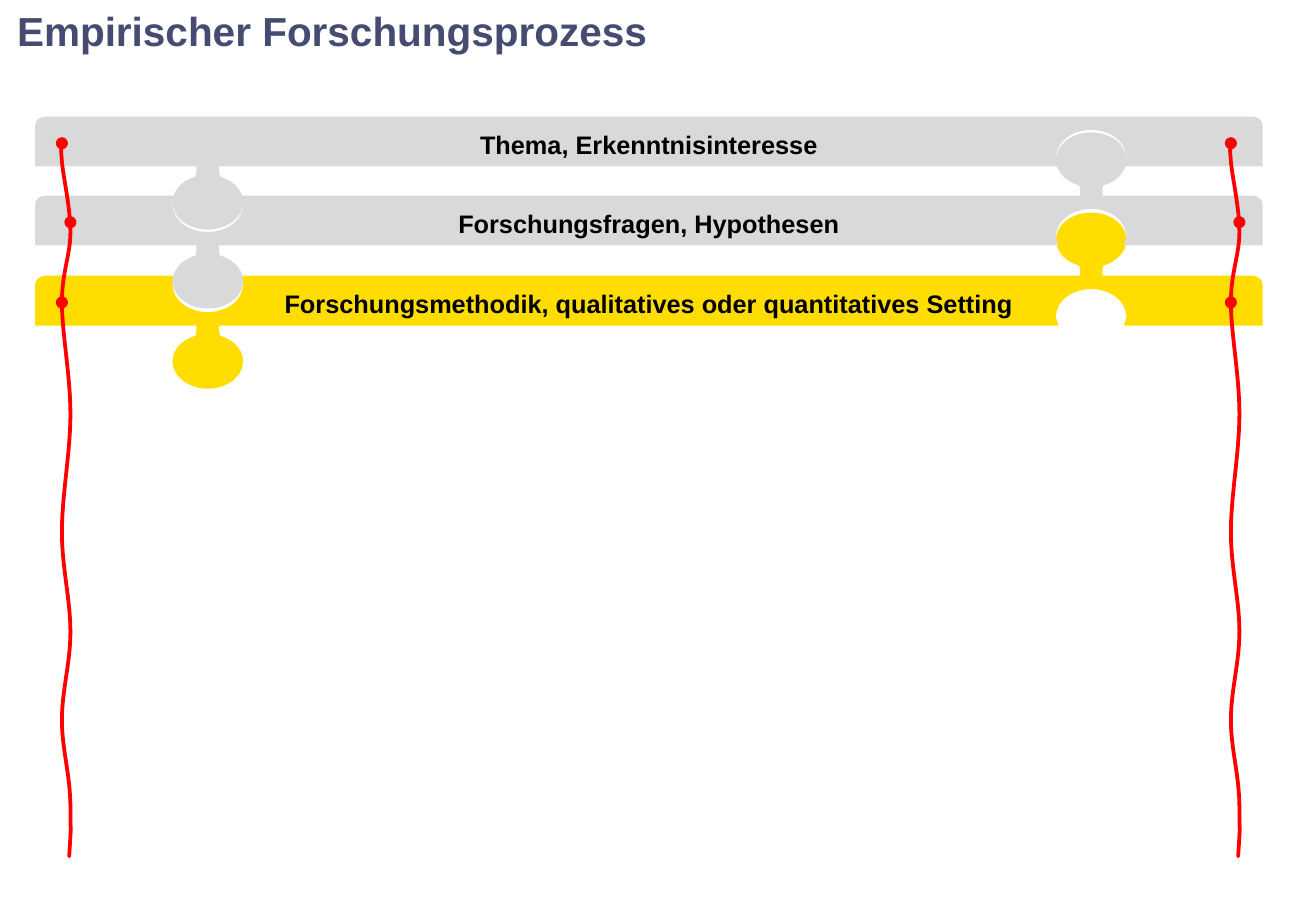
from dataclasses import dataclass

from lxml import etree
from pptx import Presentation
from pptx import util as u
from pptx.dml.color import RGBColor
from pptx.enum import shapes, text
from pptx.oxml.ns import qn

COLORS = {"title": "464B71", "text": "000000", "done": "D9D9D9",
          "current": "FFDD00", "thread": "FF0000"}
FONT = "Arial"
BAR_LEFT, BAR_RIGHT, BAR_HEIGHT = 0.29, 10.39, 0.41
TAB_X, NOTCH_X = 1.71, 8.98  # centres of the lower and upper knobs
KNOB_W, KNOB_H, DOT = 0.58, 0.45, 0.1
THREAD_SHIFT = 9.62  # distance between the two red threads

# A path step is (x, y) for a line or (x1, y1, x2, y2, x, y) for a curve
Step = tuple[float, ...]

NECK: list[Step] = [
    (-0.13, 0.66), (-0.02, 0.62, 0.03, 0.41, 0.03, 0.36),
    (0.04, 0.31, -0.07, 0.33, -0.1, 0.36),
    (-0.08, 0.46, -0.1, 0.54, -0.16, 0.56)]
SOCKET: list[Step] = [
    (-0.27, 0), (-0.29, 0.07), (-0.29, 0.2, -0.16, 0.3, 0, 0.3),
    (0.16, 0.3, 0.29, 0.2, 0.29, 0.07), (0.27, 0)]
THREAD: list[Step] = [
    (0.52, 1.17), (0.5, 1.25, 0.5, 1.2, 0.51, 1.33),
    (0.52, 1.45, 0.58, 1.71, 0.58, 1.91), (0.58, 2.1, 0.51, 2.24, 0.51, 2.49),
    (0.51, 2.74, 0.58, 3.09, 0.58, 3.41), (0.58, 3.72, 0.51, 4.08, 0.51, 4.38),
    (0.51, 4.67, 0.58, 4.94, 0.58, 5.2), (0.58, 5.46, 0.51, 5.68, 0.51, 5.93),
    (0.51, 6.17, 0.58, 6.38, 0.58, 6.65), (0.58, 6.93, 0.59, 6.72, 0.57, 7.05)]


@dataclass(frozen=True)
class Stage:
    label: str
    color: str
    top: float
    dot_x: float
    linked_above: bool = True


STAGES = [
    Stage("Thema, Erkenntnisinteresse", "done", 0.96, 0.46, linked_above=False),
    Stage("Forschungsfragen, Hypothesen", "done", 1.61, 0.53),
    Stage("Forschungsmethodik, qualitatives oder quantitatives Setting",
          "current", 2.27, 0.46),
]


def color(name: str) -> RGBColor:
    return RGBColor.from_string(COLORS[name])


def place(steps: list[Step], dx: float, dy: float,
          flip_x: int = 1, flip_y: int = 1) -> list[Step]:
    """Mirror and shift every point of a path."""
    return [tuple(dy + flip_y * v if i % 2 else dx + flip_x * v
                  for i, v in enumerate(step)) for step in steps]


def add_outline(target, steps: list[Step], closed: bool = True):
    """Draw the end points as a freeform, then bend its curved segments."""
    points = [(u.Inches(step[-2]), u.Inches(step[-1])) for step in steps]
    builder = target.build_freeform(*points[0], scale=1.0)
    builder.add_line_segments(points[1:], close=closed)
    outline = builder.convert_to_shape()
    outline.shadow.inherit = False
    left, top = (min(axis) for axis in zip(*points))
    segments = list(outline.element.iter(qn("a:lnTo")))
    for segment, step in zip(segments, steps[1:]):
        if len(step) == 2:
            continue
        segment.addprevious(curve := etree.Element(qn("a:cubicBezTo")))
        for x, y in zip(step[::2], step[1::2]):
            etree.SubElement(curve, qn("a:pt"), x=str(u.Inches(x) - left),
                             y=str(u.Inches(y) - top))
        segment.getparent().remove(segment)
    return outline


def paint(shape, name: str) -> None:
    shape.fill.solid()
    shape.fill.fore_color.rgb = color(name)
    shape.line.fill.background()


def add_oval(target, left: float, top: float, width: float, height: float,
             name: str) -> None:
    oval = target.add_shape(shapes.MSO_SHAPE.OVAL, u.Inches(left), u.Inches(top),
                            u.Inches(width), u.Inches(height))
    oval.shadow.inherit = False
    paint(oval, name)


def add_span(para, words: str, size: float, name: str) -> None:
    span = para.add_run()
    span.text = words
    span.font.name = FONT
    span.font.size = u.Pt(size)
    span.font.bold = True
    span.font.color.rgb = color(name)


def bar_path(top: float, linked_above: bool) -> list[Step]:
    left, right, bottom = BAR_LEFT, BAR_RIGHT, top + BAR_HEIGHT
    upper_socket = place(SOCKET, TAB_X, top) if linked_above else []
    return [
        (left + 0.09, top), *upper_socket, (right - 0.09, top),
        (right - 0.04, top, right, top + 0.03, right, top + 0.07), (right, bottom),
        *place(SOCKET, NOTCH_X, bottom, -1, -1), (left, bottom), (left, top + 0.07),
        (left, top + 0.03, left + 0.04, top, left + 0.09, top)]


def add_knob(target, center: float, top: float, neck_top: float,
             flip_y: int, name: str) -> None:
    add_oval(target, center - KNOB_W / 2, top, KNOB_W, KNOB_H, name)
    for side in (1, -1):
        paint(add_outline(target, place(NECK, center, neck_top, side, flip_y)), name)


def add_stage(page, stage: Stage) -> None:
    target = page.shapes.add_group_shape().shapes
    top = stage.top
    # Bar with its label
    bar = add_outline(target, bar_path(top, stage.linked_above))
    paint(bar, stage.color)
    frame = bar.text_frame
    frame.word_wrap = True
    frame.vertical_anchor = text.MSO_ANCHOR.MIDDLE
    para = frame.paragraphs[0]
    para.alignment = text.PP_ALIGN.CENTER
    para.line_spacing = 1.2
    add_span(para, stage.label, 15, "text")
    # Puzzle knobs
    add_knob(target, TAB_X, top + 0.48, top, 1, stage.color)
    if stage.linked_above:
        add_knob(target, NOTCH_X, top - 0.52, top + 0.4, -1, stage.color)


def add_thread(page, shift: float) -> None:
    thread = add_outline(page.shapes, place(THREAD, shift, 0), closed=False)
    thread.fill.background()
    thread.line.color.rgb = color("thread")
    thread.line.width = u.Pt(2.25)
    thread.element.spPr.find(qn("a:ln")).set("cap", "rnd")


def add_title(page) -> None:
    box = page.shapes.title
    box.left, box.top = u.Inches(0), u.Inches(0)
    box.width, box.height = u.Inches(5.47), u.Inches(0.5)
    frame = box.text_frame
    frame.margin_left = u.Inches(0.14)
    frame.word_wrap = False
    frame.auto_size = text.MSO_AUTO_SIZE.SHAPE_TO_FIT_TEXT
    frame.vertical_anchor = text.MSO_ANCHOR.MIDDLE
    para = frame.paragraphs[0]
    para.alignment = text.PP_ALIGN.LEFT
    add_span(para, "Empirischer Forschungsprozess", 24, "title")


def main() -> None:
    deck = Presentation()
    deck.slide_width, deck.slide_height = u.Inches(10.83), u.Inches(7.5)
    page = deck.slides.add_slide(deck.slide_layouts[5])
    add_title(page)
    # Stages, the lowest one at the back
    for stage in reversed(STAGES):
        add_stage(page, stage)
    # Red threads with a dot on every stage
    for shift in (0, THREAD_SHIFT):
        add_thread(page, shift)
        for stage in STAGES:
            add_oval(page.shapes, stage.dot_x + shift, stage.top + 0.17, DOT, DOT,
                     "thread")
    deck.save("out.pptx")


if __name__ == "__main__":
    main()
